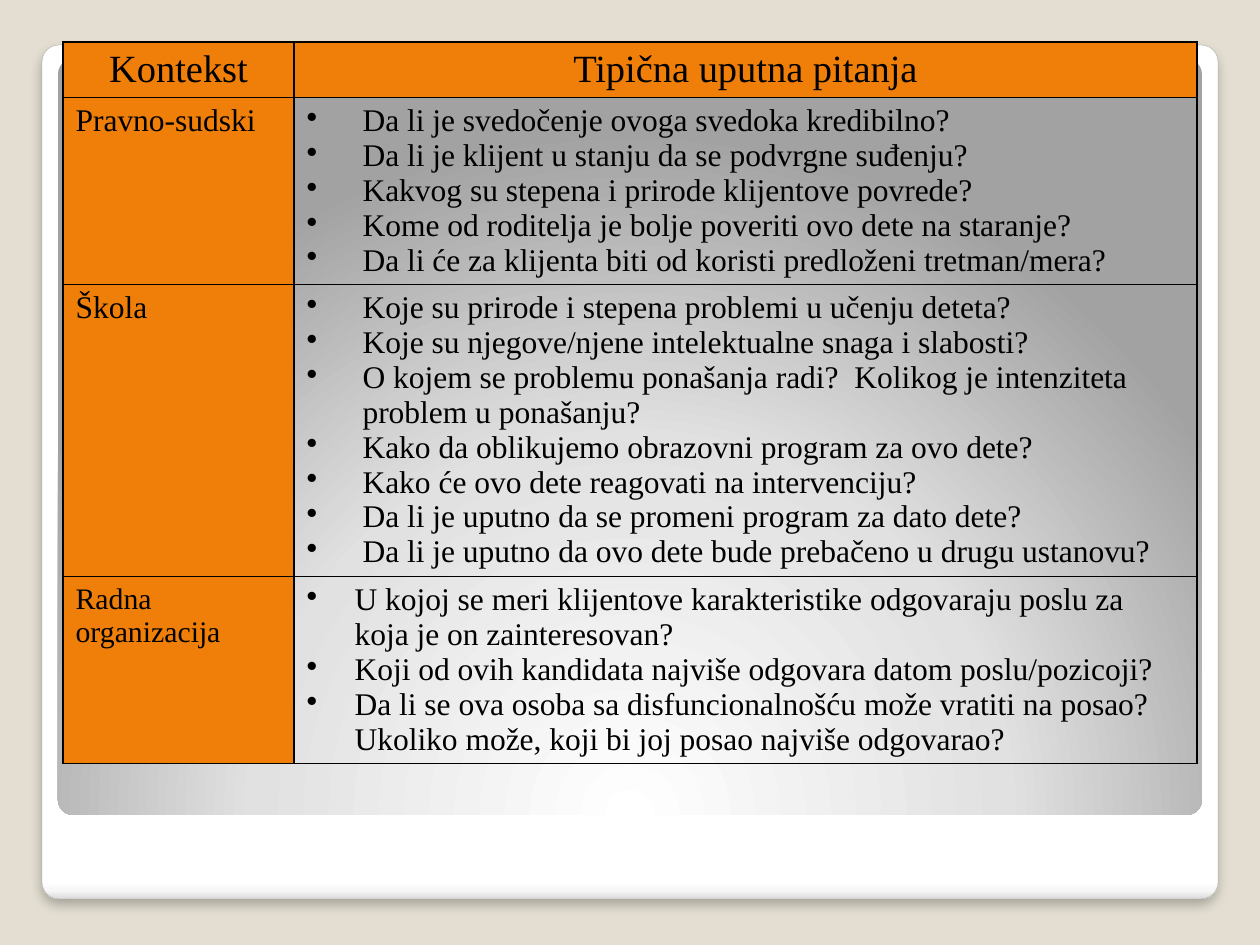
from lxml.etree import SubElement
from pptx import Presentation
from pptx.dml.color import RGBColor
from pptx.enum.shapes import MSO_SHAPE
from pptx.enum.text import PP_ALIGN
from pptx.oxml import parse_xml
from pptx.oxml.ns import nsdecls, qn
from pptx.util import Pt

SCALE = 914400 / 126
ORANGE, BLACK = "F07F09", "000000"
FACE = "Times New Roman"

# Context, its text size, hanging indent of its questions, row height, questions
ROWS = [
    ("Pravno-sudski", 18, 56, 187, [
        "Da li je svedočenje ovoga svedoka kredibilno?",
        "Da li je klijent u stanju da se podvrgne suđenju?",
        "Kakvog su stepena i prirode klijentove povrede?",
        "Kome od roditelja je bolje poveriti ovo dete na staranje?",
        "Da li će za klijenta biti od koristi predloženi tretman/mera?",
    ]),
    ("Škola", 18, 56, 292, [
        "Koje su prirode i stepena problemi u učenju deteta?",
        "Koje su njegove/njene intelektualne snaga i slabosti?",
        "O kojem se problemu ponašanja radi?  Kolikog je intenziteta "
        "problem u ponašanju?",
        "Kako da oblikujemo obrazovni program za ovo dete?",
        "Kako će ovo dete reagovati na intervenciju?",
        "Da li je uputno da se promeni program za dato dete?",
        "Da li je uputno da ovo dete bude prebačeno u drugu ustanovu?",
    ]),
    ("Radna organizacija", 17, 48, 187, [
        "U kojoj se meri klijentove karakteristike odgovaraju poslu za "
        "koja je on zainteresovan?",
        "Koji od ovih kandidata najviše odgovara datom poslu/pozicoji?",
        "Da li se ova osoba sa disfuncionalnošću može vratiti na posao? "
        "Ukoliko može, koji bi joj posao najviše odgovarao?",
    ]),
]


def px(num):
    return round(num * SCALE)


def color(code):
    return RGBColor.from_string(code)


def grade(shape, stops, shade):
    """Fill a shape with a gradient; shade is the XML of its direction."""
    marks = "".join(
        f'<a:gs pos="{pos * 1000}"><a:srgbClr val="{code}"/></a:gs>'
        for pos, code in stops)
    fill = parse_xml(f'<a:gradFill {nsdecls("a")} rotWithShape="1">'
                     f'<a:gsLst>{marks}</a:gsLst>{shade}</a:gradFill>')
    shape.fill.background()
    props = shape.fill._xPr
    props.replace(props.find(qn("a:noFill")), fill)


def add_card(slide, left, top, width, height):
    card = slide.shapes.add_shape(MSO_SHAPE.ROUNDED_RECTANGLE, px(left),
                                  px(top), px(width), px(height))
    card.adjustments[0] = 0.02
    card.shadow.inherit = False
    return card


def add_shade(card):
    """Give a card a soft shadow below."""
    effects = card.fill._xPr.find(qn("a:effectLst"))
    effects.append(parse_xml(
        f'<a:outerShdw {nsdecls("a")} blurRad="{Pt(6)}" dist="{Pt(4)}" '
        'dir="5400000" rotWithShape="0"><a:srgbClr val="000000">'
        '<a:alpha val="25000"/></a:srgbClr></a:outerShdw>'))


def add_bullet(para, indent):
    props = para._p.get_or_add_pPr()
    props.set("marL", str(px(indent)))
    props.set("indent", str(-px(indent)))
    SubElement(props, qn("a:buChar"), char="•")


def fill_cell(cell, lines, size, back=None, align=PP_ALIGN.LEFT, indent=0):
    frame = cell.text_frame
    for num, line in enumerate(lines):
        para = frame.add_paragraph() if num else frame.paragraphs[0]
        para.alignment = align
        if indent:
            add_bullet(para, indent)
        run = para.add_run()
        run.text = line
        form = {"name": FACE, "size": Pt(size), "bold": False}
        for key, value in form.items():
            setattr(run.font, key, value)
        run.font.color.rgb = color(BLACK)
    if back:
        cell.fill.solid()
        cell.fill.fore_color.rgb = color(back)
    else:
        cell.fill.background()
    add_edges(cell)


def add_edges(cell):
    props = cell._tc.get_or_add_tcPr()
    for num, side in enumerate(("lnL", "lnR", "lnT", "lnB")):
        props.insert(num, parse_xml(
            f'<a:{side} {nsdecls("a")} w="{Pt(1)}"><a:solidFill>'
            f'<a:srgbClr val="{BLACK}"/></a:solidFill></a:{side}>'))


def add_grid(slide):
    heights = [55] + [row[3] for row in ROWS]
    widths = [231, 903]
    grid = slide.shapes.add_table(len(heights), 2, px(63), px(42),
                                  px(sum(widths)), px(sum(heights))).table
    grid.horz_banding = False
    for col, width in zip(grid.columns, widths):
        col.width = px(width)
    for row, height in zip(grid.rows, heights):
        row.height = px(height)

    # Heading row
    for col, head in enumerate(("Kontekst", "Tipična uputna pitanja")):
        fill_cell(grid.cell(0, col), [head], 22, ORANGE, PP_ALIGN.CENTER)

    # Contexts and their questions
    for num, (name, size, indent, _, asks) in enumerate(ROWS, 1):
        fill_cell(grid.cell(num, 0), [name], size, ORANGE)
        fill_cell(grid.cell(num, 1), asks, 18, indent=indent)


def main():
    deck = Presentation()
    deck.slide_width, deck.slide_height = px(1260), px(945)
    slide = deck.slides.add_slide(deck.slide_layouts[6])
    slide.background.fill.solid()
    slide.background.fill.fore_color.rgb = color("E3DED1")

    # White card
    card = add_card(slide, 42, 45, 1176, 854)
    grade(card, [(0, "FFFFFF"), (98, "FFFFFF"), (99, "F7F7F7"),
                 (100, "DADADA")], '<a:lin ang="5400000" scaled="0"/>')
    card.line.color.rgb = color("A4A4A4")
    card.line.width = Pt(0.16)
    add_shade(card)

    # Grey panel
    panel = add_card(slide, 58, 59, 1144, 756)
    grade(panel, [(0, "FFFFFF"), (55, "E1E1E1"), (100, "A2A2A2")],
          '<a:path path="circle"><a:fillToRect l="50000" t="175000" '
          'r="50000" b="-75000"/></a:path>')
    panel.line.fill.background()

    add_grid(slide)
    deck.save("out.pptx")


if __name__ == "__main__":
    main()
